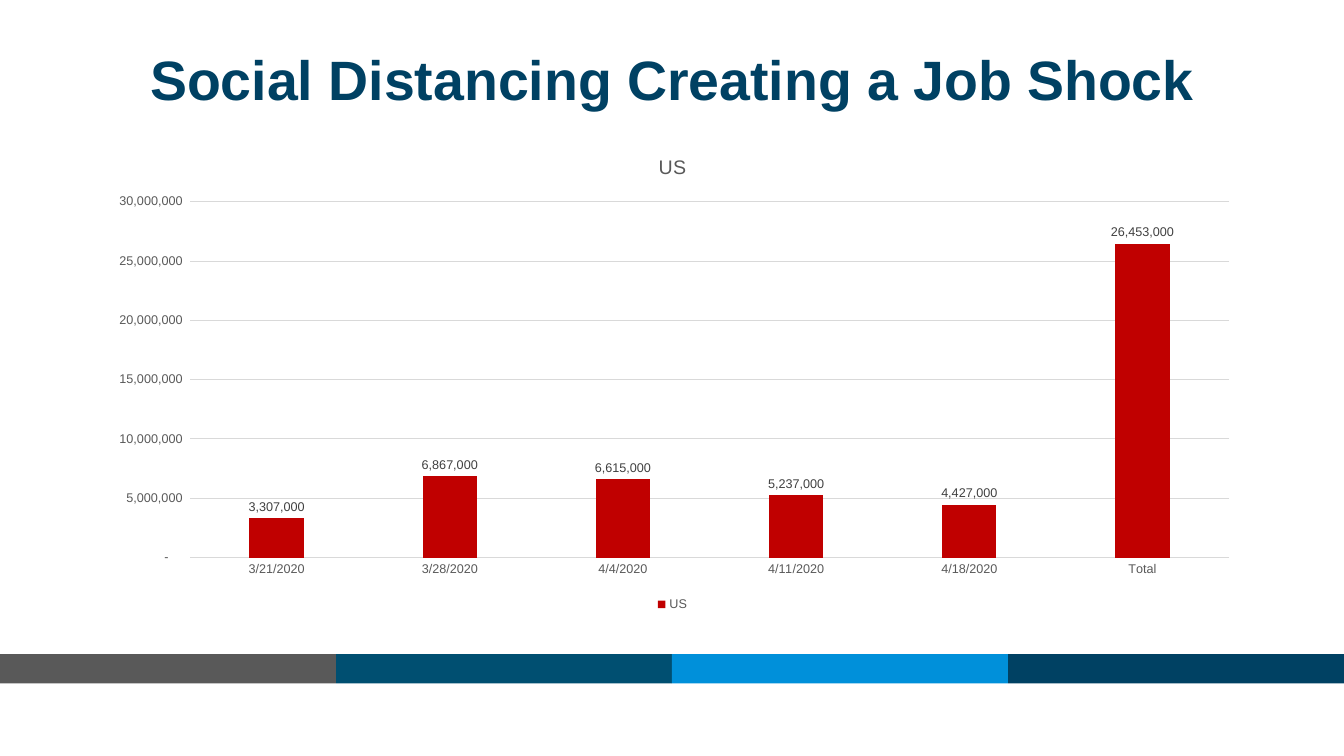
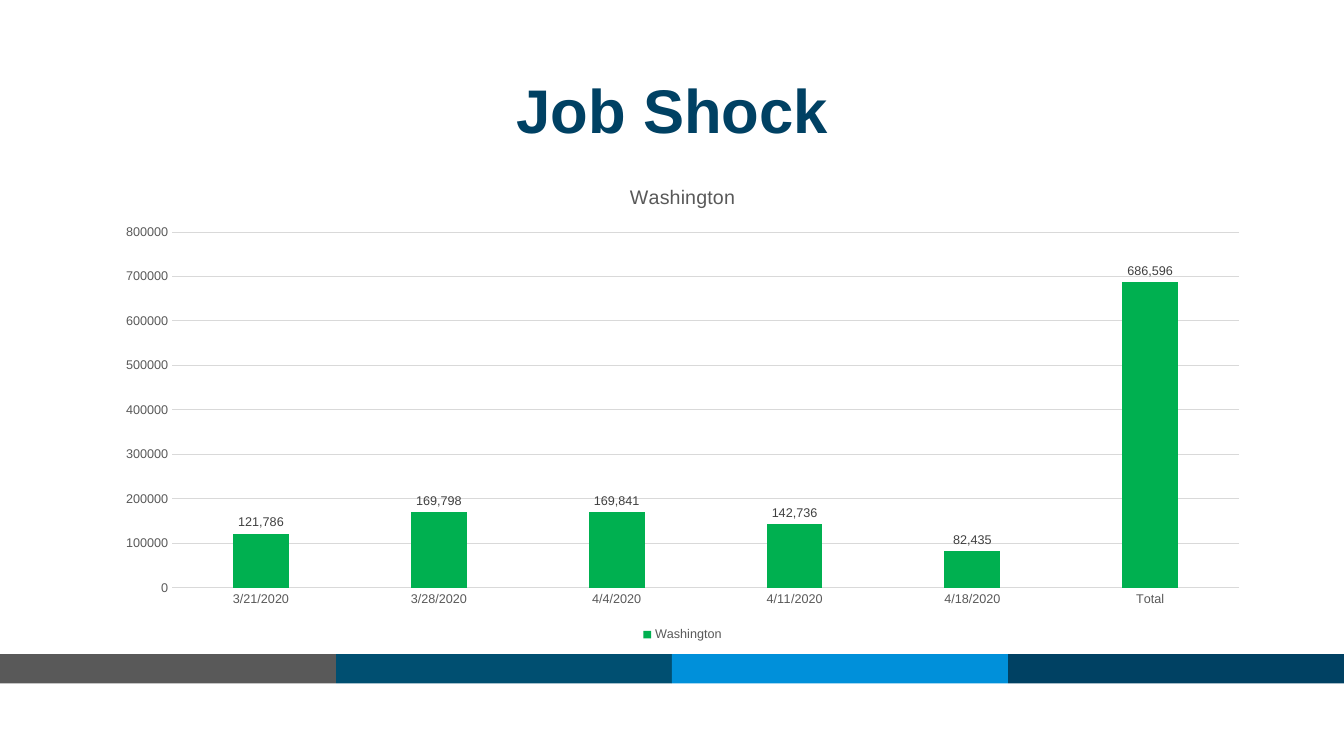
from dataclasses import dataclass
from pptx import Presentation
from pptx.chart.data import CategoryChartData as ChartData
from pptx.dml.color import RGBColor as RGB
from pptx.enum.chart import XL_CHART_TYPE as Kind
from pptx.enum.chart import XL_LABEL_POSITION as Spot
from pptx.enum.chart import XL_LEGEND_POSITION as Side
from pptx.enum.chart import XL_TICK_MARK as Tick
from pptx.enum.shapes import MSO_SHAPE as Shape
from pptx.enum.text import MSO_ANCHOR as Anchor
from pptx.enum.text import MSO_AUTO_SIZE as Fit
from pptx.enum.text import PP_ALIGN as Align
from pptx.util import Inches, Pt


@dataclass(frozen=True)
class Theme:
    face: str = "Arial"
    navy: str = "004163"
    gray: str = "595959"
    dark: str = "404040"
    black: str = "000000"
    grid: str = "D9D9D9"
    red: str = "C00000"
    green: str = "00B050"
    bands: tuple = ("595959", "004F71", "0090DA", "004163")
    base: float = 10
    small: float = 9
    head: float = 14
    title: float = 44
    tight: float = 39.6
    hair: float = 0.75


THEME = Theme()
WIDTH, HEIGHT = 13.33, 7.5
MONEY = r'_(* #,##0_);_(* \(#,##0\);_(* "-"??_);_('
WEEKS = ("3/21/2020", "3/28/2020", "4/4/2020", "4/11/2020", "4/18/2020", "Total")


def assign(item, values):
    for name, value in values.items():
        setattr(item, name, value)


class Deck:
    def __init__(self, theme):
        self.theme = theme
        self.show = Presentation()
        assign(self.show, {"slide_width": Inches(WIDTH), "slide_height": Inches(HEIGHT)})
        self.slide = None

    def style(self, font, size, color, bold=False):
        assign(font, {"name": self.theme.face, "size": Pt(size), "bold": bold})
        font.color.rgb = RGB.from_string(color)

    def stroke(self, line):
        line.color.rgb = RGB.from_string(self.theme.grid)
        line.width = Pt(self.theme.hair)

    def start(self):
        self.slide = self.show.slides.add_slide(self.show.slide_layouts[5])
        self.bands()

    def bands(self):
        step = WIDTH / len(self.theme.bands)
        for place, color in enumerate(self.theme.bands):
            band = self.slide.shapes.add_shape(
                Shape.RECTANGLE, Inches(place * step), Inches(6.49), Inches(step), Inches(0.29))
            band.shadow.inherit = False
            band.fill.solid()
            band.fill.fore_color.rgb = RGB.from_string(color)
            band.line.fill.background()

    def title(self, text, size, base=0.05):
        box = self.slide.shapes.title
        assign(box, {"left": Inches(0.92), "top": Inches(0.4),
                     "width": Inches(11.5), "height": Inches(1.45)})
        frame = box.text_frame
        frame.text = text
        assign(frame, {"word_wrap": True, "auto_size": Fit.NONE,
                       "vertical_anchor": Anchor.MIDDLE, "margin_bottom": Inches(base)})
        line = frame.paragraphs[0]
        assign(line, {"alignment": Align.CENTER, "line_spacing": 0.9})
        self.style(line.runs[0].font, size, self.theme.navy, True)

    def chart(self, name, counts, color, left, top, peak, step, form):
        data = ChartData(number_format=MONEY)
        data.categories = WEEKS
        data.add_series(name, counts)
        chart = self.slide.shapes.add_chart(
            Kind.COLUMN_CLUSTERED, Inches(left), Inches(top),
            Inches(11.5), Inches(4.76), data).chart
        self.style(chart.font, self.theme.base, self.theme.black)
        self.head(chart, name)
        self.legend(chart)
        self.axes(chart, peak, step, form)
        self.bars(chart.plots[0], color)

    def head(self, chart, text):
        chart.has_title = True
        head = chart.chart_title
        head.include_in_layout = False
        head.text_frame.text = text
        self.style(head.text_frame.paragraphs[0].runs[0].font, self.theme.head, self.theme.gray)

    def legend(self, chart):
        chart.has_legend = True
        assign(chart.legend, {"position": Side.BOTTOM, "include_in_layout": False})
        self.style(chart.legend.font, self.theme.small, self.theme.gray)

    def axes(self, chart, peak, step, form):
        across, up = chart.category_axis, chart.value_axis
        for axis in (across, up):
            assign(axis, {"major_tick_mark": Tick.NONE, "minor_tick_mark": Tick.NONE})
            self.style(axis.tick_labels.font, self.theme.small, self.theme.gray)
        self.stroke(across.format.line)
        up.format.line.fill.background()
        assign(up, {"minimum_scale": 0, "maximum_scale": peak,
                    "major_unit": step, "has_major_gridlines": True})
        self.stroke(up.major_gridlines.format.line)
        assign(up.tick_labels, {"number_format": form, "number_format_is_linked": False})

    def bars(self, plot, color):
        assign(plot, {"gap_width": 219, "overlap": -27,
                      "vary_by_categories": False, "has_data_labels": True})
        fill = plot.series[0].format.fill
        fill.solid()
        fill.fore_color.rgb = RGB.from_string(color)
        labels = plot.data_labels
        assign(labels, {"show_value": True, "position": Spot.OUTSIDE_END,
                        "number_format": MONEY, "number_format_is_linked": False})
        self.style(labels.font, self.theme.small, self.theme.dark)


def main():
    deck = Deck(THEME)

    deck.start()
    deck.title("Social Distancing Creating a Job Shock", THEME.tight, base=0.67)
    deck.chart("US", (3307000, 6867000, 6615000, 5237000, 4427000, 26453000),
               THEME.red, 0.92, 1.35, 30000000, 5000000, MONEY)

    deck.start()
    deck.title("Job Shock", THEME.title)
    deck.chart("Washington", (121786, 169798, 169841, 142736, 82435, 686596),
               THEME.green, 1.02, 1.65, 800000, 100000, "General")

    deck.show.save("out.pptx")


if __name__ == "__main__":
    main()
